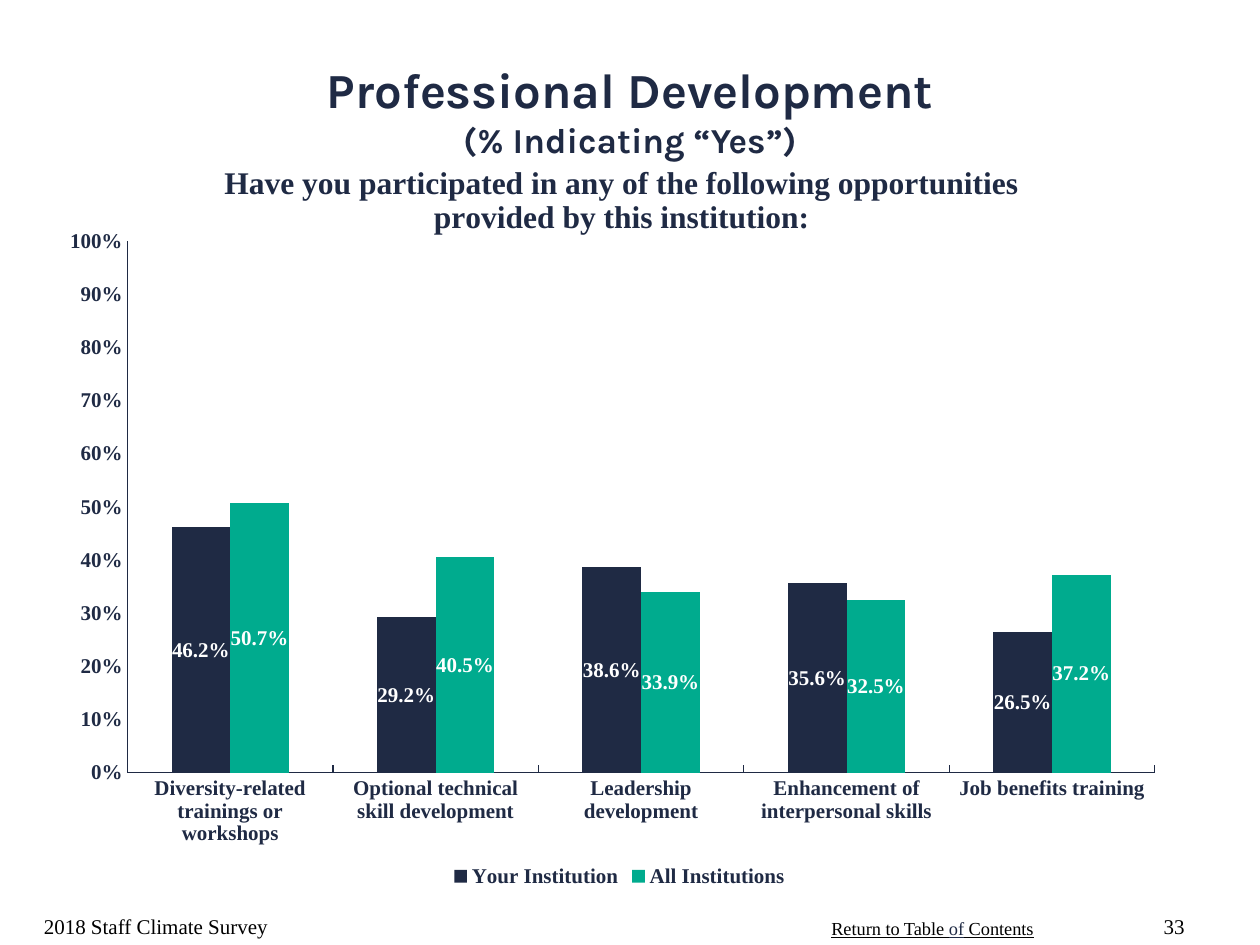
"""Build a survey slide with a clustered column chart of training uptake."""
from dataclasses import dataclass

from lxml.etree import SubElement
from pptx import Presentation
from pptx.chart.data import CategoryChartData as Data
from pptx.dml.color import RGBColor as Rgb
from pptx.enum.chart import XL_CHART_TYPE as Kind
from pptx.enum.chart import XL_LABEL_POSITION as Spot
from pptx.enum.chart import XL_LEGEND_POSITION as Side
from pptx.enum.chart import XL_TICK_MARK as Tick
from pptx.enum.text import MSO_ANCHOR as Anchor
from pptx.enum.text import MSO_AUTO_SIZE as Fit
from pptx.enum.text import PP_ALIGN as Align
from pptx.oxml.ns import qn
from pptx.util import Inches, Pt

WIDE, HIGH = Inches(10), Inches(7.5)
HUES = {"navy": "1F2A44", "green": "00AB8E", "white": "FFFFFF", "black": "000000"}
HEAD, BODY = "Karla", "Times New Roman"


@dataclass
class Box:
    """Place and size as shares of the slide."""
    left: float
    top: float
    width: float
    height: float

    def frame(self) -> tuple:
        return (int(self.left * WIDE), int(self.top * HIGH),
                int(self.width * WIDE), int(self.height * HIGH))


@dataclass
class Piece:
    """A run of text with its look."""
    text: str
    size: float = 12
    hue: str = "black"
    face: str = BODY
    bold: bool = False
    line: bool = False


@dataclass
class Note:
    """A small text box at the foot of the slide."""
    box: Box
    runs: list[Piece]
    align: Align = Align.LEFT


@dataclass
class Group:
    """A chart series."""
    name: str
    hue: str
    vals: list[float]


TITLE = Box(0, 1 / 30, 1, 1 / 6)
PLOT = Box(0.05, 1 / 6, 53 / 60, 7 / 9)
EDGE = {"xMode": "edge", "yMode": "edge"}
INNER = {"layoutTarget": "inner", **EDGE, "x": 0.058, "y": 0.114, "w": 0.923, "h": 0.723}
ABOVE = {**EDGE, "x": 0.14, "y": 0}
ASK = "Have you participated in any of the following opportunities provided by this institution:"
CATS = ["Diversity-related trainings or workshops", "Optional technical skill development",
        "Leadership development", "Enhancement of interpersonal skills", "Job benefits training"]
GROUPS = [
    Group("Your Institution", "navy", [0.462, 0.292, 0.386, 0.356, 0.265]),
    Group("All Institutions", "green", [0.507, 0.405, 0.339, 0.325, 0.372]),
]
NOTES = [
    Note(Box(0.65, 14 / 15, 0.22, 1 / 15),
         [Piece("Return to Table ", 10.5, line=True), Piece("of", 10.5, "navy", line=True),
          Piece(" Contents", 10.5, line=True)]),
    Note(Box(0.025, 14 / 15, 0.32, 1 / 15), [Piece("2018 Staff Climate Survey")]),
    Note(Box(0.9, 14 / 15, 0.05, 1 / 15), [Piece("33")], Align.RIGHT),
]


def tint(hue: str) -> Rgb:
    return Rgb.from_string(HUES[hue])


def style(font, size: float, hue: str = "navy", face: str = BODY, bold: bool = True) -> None:
    font.size, font.name, font.bold = Pt(size), face, bold
    font.color.rgb = tint(hue)


def write(para, piece: Piece) -> None:
    run = para.add_run()
    run.text = piece.text
    style(run.font, piece.size, piece.hue, piece.face, piece.bold)
    if piece.line:
        run.font.underline = True


def draw_title(shape) -> None:
    shape.left, shape.top, shape.width, shape.height = TITLE.frame()
    frame = shape.text_frame
    frame.auto_size, frame.vertical_anchor = Fit.NONE, Anchor.MIDDLE
    para = frame.paragraphs[0]
    para.alignment = Align.CENTER
    write(para, Piece("Professional Development", 28, "navy", HEAD, True))
    para.add_line_break()
    write(para, Piece("(% Indicating “Yes”)", 20, "navy", HEAD, True))


def draw_note(slide, note: Note) -> None:
    frame = slide.shapes.add_textbox(*note.box.frame()).text_frame
    frame.word_wrap, frame.vertical_anchor = True, Anchor.BOTTOM
    para = frame.paragraphs[0]
    para.alignment = note.align
    for piece in note.runs:
        write(para, piece)


def set_place(node, index: int, parts: dict) -> None:
    for old in node.findall(qn("c:layout")):
        node.remove(old)
    lay = SubElement(node, qn("c:layout"))
    node.insert(index, lay)
    man = SubElement(lay, qn("c:manualLayout"))
    for tag, val in parts.items():
        SubElement(man, qn(f"c:{tag}")).set("val", str(val))


def set_axis(axis, tick: Tick) -> None:
    axis.has_major_gridlines = False
    axis.major_tick_mark, axis.minor_tick_mark = tick, Tick.NONE
    style(axis.tick_labels.font, 12)
    axis.format.line.color.rgb = tint("navy")
    axis.format.line.width = Pt(0.75)


def draw_chart(slide) -> None:
    data = Data(number_format="0.0%")
    data.categories = CATS
    for group in GROUPS:
        data.add_series(group.name, group.vals)
    chart = slide.shapes.add_chart(Kind.COLUMN_CLUSTERED, *PLOT.frame(), data).chart
    style(chart.font, 10)
    chart.has_title = True
    write(chart.chart_title.text_frame.paragraphs[0], Piece(ASK, 18, "navy", bold=True))
    chart.has_legend = True
    chart.legend.position = Side.BOTTOM
    chart.legend.include_in_layout = False
    style(chart.legend.font, 12)
    set_axis(chart.category_axis, Tick.INSIDE)
    axis = chart.value_axis
    set_axis(axis, Tick.NONE)
    axis.minimum_scale, axis.maximum_scale, axis.major_unit = 0, 1, 0.1
    axis.tick_labels.number_format = "0%"
    axis.tick_labels.number_format_is_linked = False
    plot = chart.plots[0]
    plot.gap_width, plot.overlap, plot.vary_by_categories = 150, 0, False
    for group, bars in zip(GROUPS, plot.series):
        bars.format.fill.solid()
        bars.format.fill.fore_color.rgb = tint(group.hue)
        tags = bars.data_labels
        tags.show_value, tags.position = True, Spot.CENTER
        tags.number_format, tags.number_format_is_linked = "0.0%", False
        style(tags.font, 12, "white")
    root = chart._chartSpace.chart
    set_place(root.plotArea, 0, INNER)
    set_place(root.find(qn("c:title")), 1, ABOVE)


def main() -> None:
    deck = Presentation()
    deck.slide_width, deck.slide_height = WIDE, HIGH
    slide = deck.slides.add_slide(deck.slide_layouts[5])
    draw_title(slide.shapes.title)
    draw_chart(slide)
    for note in NOTES:
        draw_note(slide, note)
    deck.save("out.pptx")


if __name__ == "__main__":
    main()
